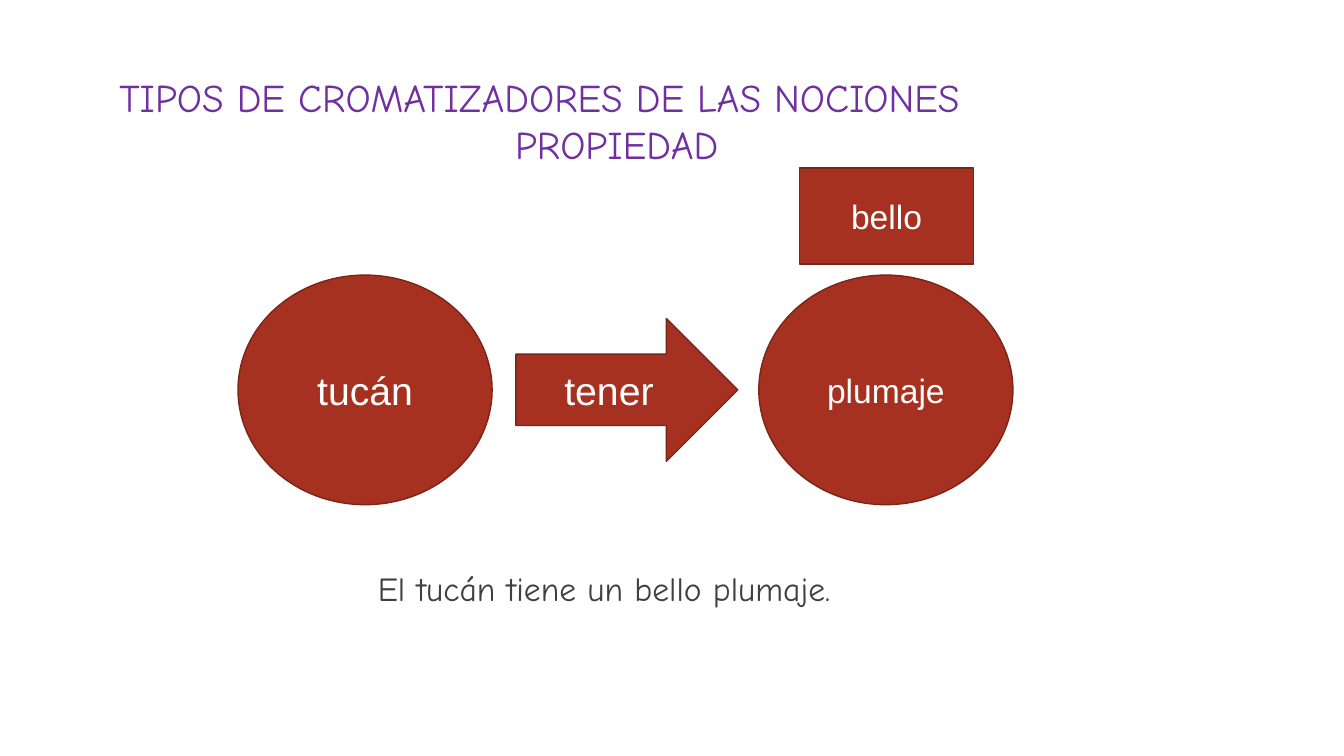
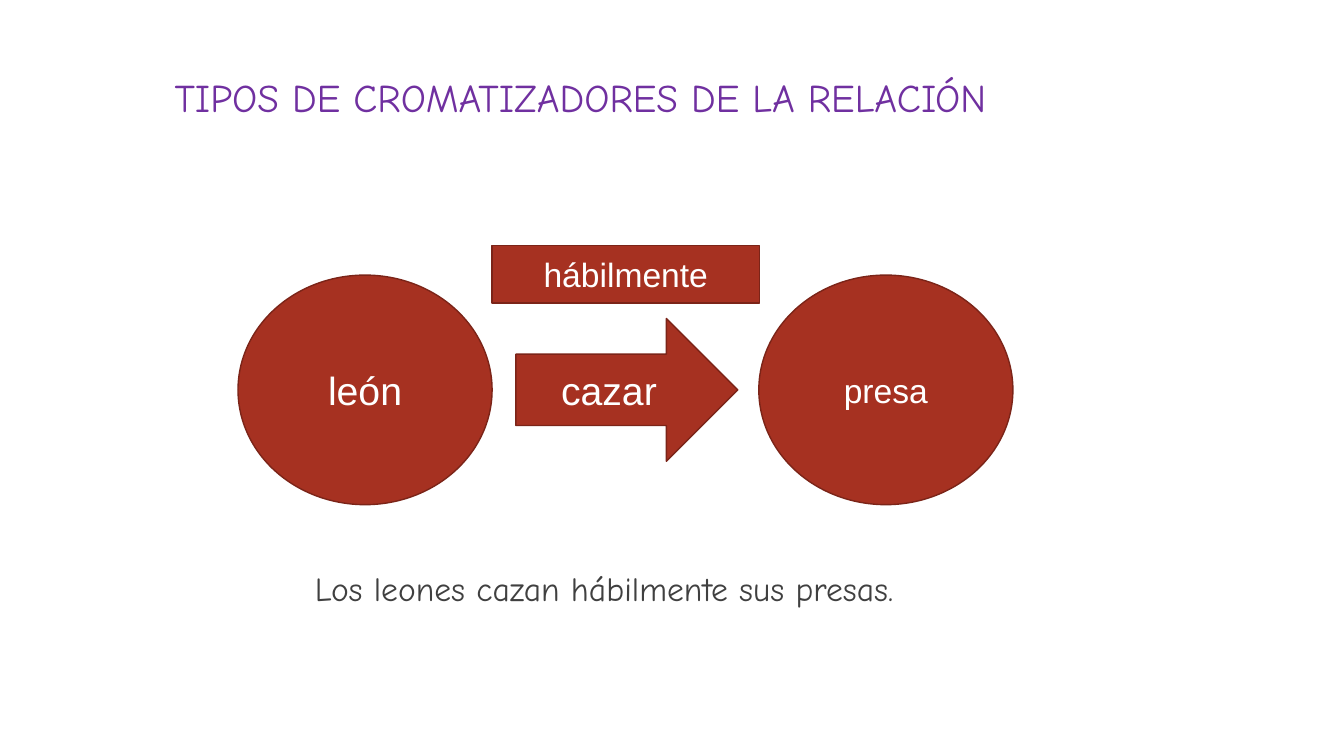
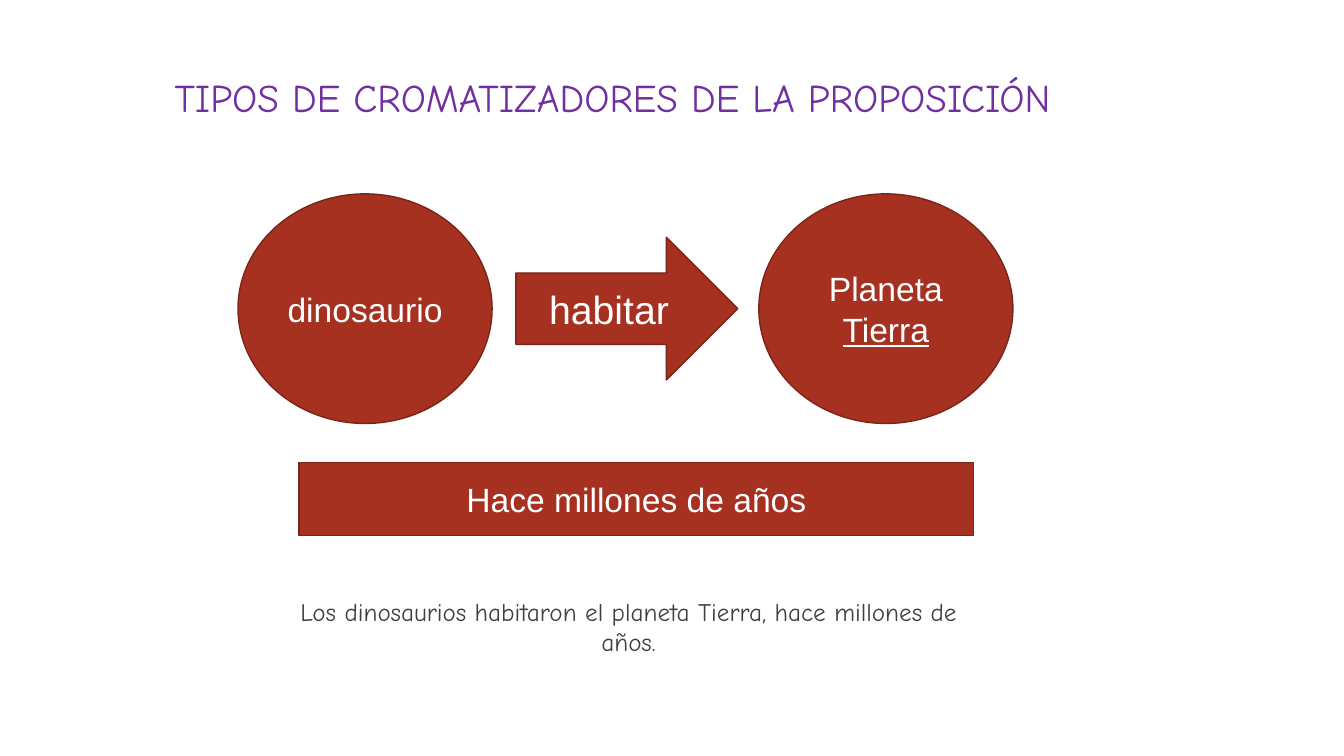
from dataclasses import dataclass

from pptx import Presentation
from pptx.dml.color import RGBColor
from pptx.enum import shapes, text
from pptx.util import Pt


@dataclass(frozen=True)
class Theme:
    fill: RGBColor = RGBColor.from_string("A63121")
    outline: RGBColor = RGBColor.from_string("7B2418")
    label: RGBColor = RGBColor.from_string("FFFFFF")
    title: RGBColor = RGBColor.from_string("7030A0")
    sentence: RGBColor = RGBColor.from_string("404040")
    diagram_font: str = "Arial"
    prose_font: str = "Comic Neue"
    large: int = 28
    medium: int = 24
    small: int = 18


THEME = Theme()
CENTER = text.PP_ALIGN.CENTER
MIDDLE = text.MSO_ANCHOR.MIDDLE


def write(shape, content, *, size, font=THEME.diagram_font, color=THEME.label,
          aligns=(CENTER,), anchor=MIDDLE, wrap=True, grow=False, underlined=""):
    """Fill a shape, one paragraph per line; the last of aligns serves the remaining lines."""
    frame = shape.text_frame
    frame.word_wrap = wrap
    frame.vertical_anchor = anchor
    frame.auto_size = text.MSO_AUTO_SIZE.SHAPE_TO_FIT_TEXT if grow else text.MSO_AUTO_SIZE.NONE
    for index, line in enumerate(content.split("\n")):
        paragraph = frame.add_paragraph() if index else frame.paragraphs[0]
        paragraph.alignment = aligns[min(index, len(aligns) - 1)]
        before, marked, after = line.partition(underlined) if underlined else (line, "", "")
        for piece in filter(None, (before, marked, after)):
            run = paragraph.add_run()
            run.text = piece
            run.font.size = Pt(size)
            run.font.name = font
            run.font.color.rgb = color
            if piece == marked:
                run.font.underline = True


def add_block(slide, kind, box, content, **style):
    block = slide.shapes.add_shape(kind, *map(Pt, box))
    block.shadow.inherit = False
    block.fill.solid()
    block.fill.fore_color.rgb = THEME.fill
    block.line.color.rgb = THEME.outline
    block.line.width = Pt(1)
    write(block, content, **style)


# Boxes are left, top, width, height in points.
NOTION_WIDTH, NOTION_HEIGHT = 181.5, 164
SUBJECT_LEFT, OBJECT_LEFT = 170, 542
RELATION_LEFT, RELATION_WIDTH, RELATION_HEIGHT = 368.5, 158.5, 102
TITLE_TOP = 49

propositions = [
    dict(title="TIPOS DE CROMATIZADORES DE LAS NOCIONES\nPROPIEDAD",
         title_box=(78, TITLE_TOP, 725, 75), axis=278.5,
         subject="tucán", subject_size=THEME.large, relation="tener", object="plumaje",
         modifier="bello", modifier_box=(571, 120, 124.5, 68.5),
         sentence="El tucán tiene un bello plumaje.",
         sentence_box=(185, 402, 493, 36), sentence_size=THEME.medium),
    dict(title="TIPOS DE CROMATIZADORES DE LA RELACIÓN",
         title_box=(117.5, TITLE_TOP, 686, 41), axis=278.5,
         subject="león", subject_size=THEME.large, relation="cazar", object="presa",
         modifier="hábilmente", modifier_box=(351.5, 175.5, 191, 41),
         sentence="Los leones cazan hábilmente sus presas.",
         sentence_box=(185, 402, 493, 36), sentence_size=THEME.medium),
    dict(title="TIPOS DE CROMATIZADORES DE LA PROPOSICIÓN",
         title_box=(117.5, TITLE_TOP, 741.5, 41), axis=220.5,
         subject="dinosaurio", subject_size=THEME.medium, relation="habitar",
         object="Planeta Tierra", underlined="Tierra",
         modifier="Hace millones de años", modifier_box=(213.5, 330.5, 482, 52),
         sentence="Los dinosaurios habitaron el planeta Tierra, hace millones de años.",
         sentence_box=(202.5, 422.5, 493, 51), sentence_size=THEME.small),
]

deck = Presentation()
deck.slide_width, deck.slide_height = Pt(960), Pt(540)
title_only = deck.slide_layouts[5]

for item in propositions:
    slide = deck.slides.add_slide(title_only)

    title = slide.shapes.title
    title.left, title.top, title.width, title.height = map(Pt, item["title_box"])
    write(title, item["title"], size=THEME.large, font=THEME.prose_font, color=THEME.title,
          aligns=(text.PP_ALIGN.LEFT, CENTER), anchor=text.MSO_ANCHOR.TOP,
          wrap=False, grow=True)

    notion_top = item["axis"] - NOTION_HEIGHT / 2
    relation_top = item["axis"] - RELATION_HEIGHT / 2
    add_block(slide, shapes.MSO_SHAPE.OVAL,
              (SUBJECT_LEFT, notion_top, NOTION_WIDTH, NOTION_HEIGHT),
              item["subject"], size=item["subject_size"])
    add_block(slide, shapes.MSO_SHAPE.OVAL,
              (OBJECT_LEFT, notion_top, NOTION_WIDTH, NOTION_HEIGHT),
              item["object"], size=THEME.medium, underlined=item.get("underlined", ""))
    add_block(slide, shapes.MSO_SHAPE.RIGHT_ARROW,
              (RELATION_LEFT, relation_top, RELATION_WIDTH, RELATION_HEIGHT),
              item["relation"], size=THEME.large)
    add_block(slide, shapes.MSO_SHAPE.RECTANGLE, item["modifier_box"],
              item["modifier"], size=THEME.medium)

    sentence = slide.shapes.add_textbox(*map(Pt, item["sentence_box"]))
    write(sentence, item["sentence"], size=item["sentence_size"], font=THEME.prose_font,
          color=THEME.sentence, anchor=text.MSO_ANCHOR.TOP, grow=True)

deck.save("out.pptx")
